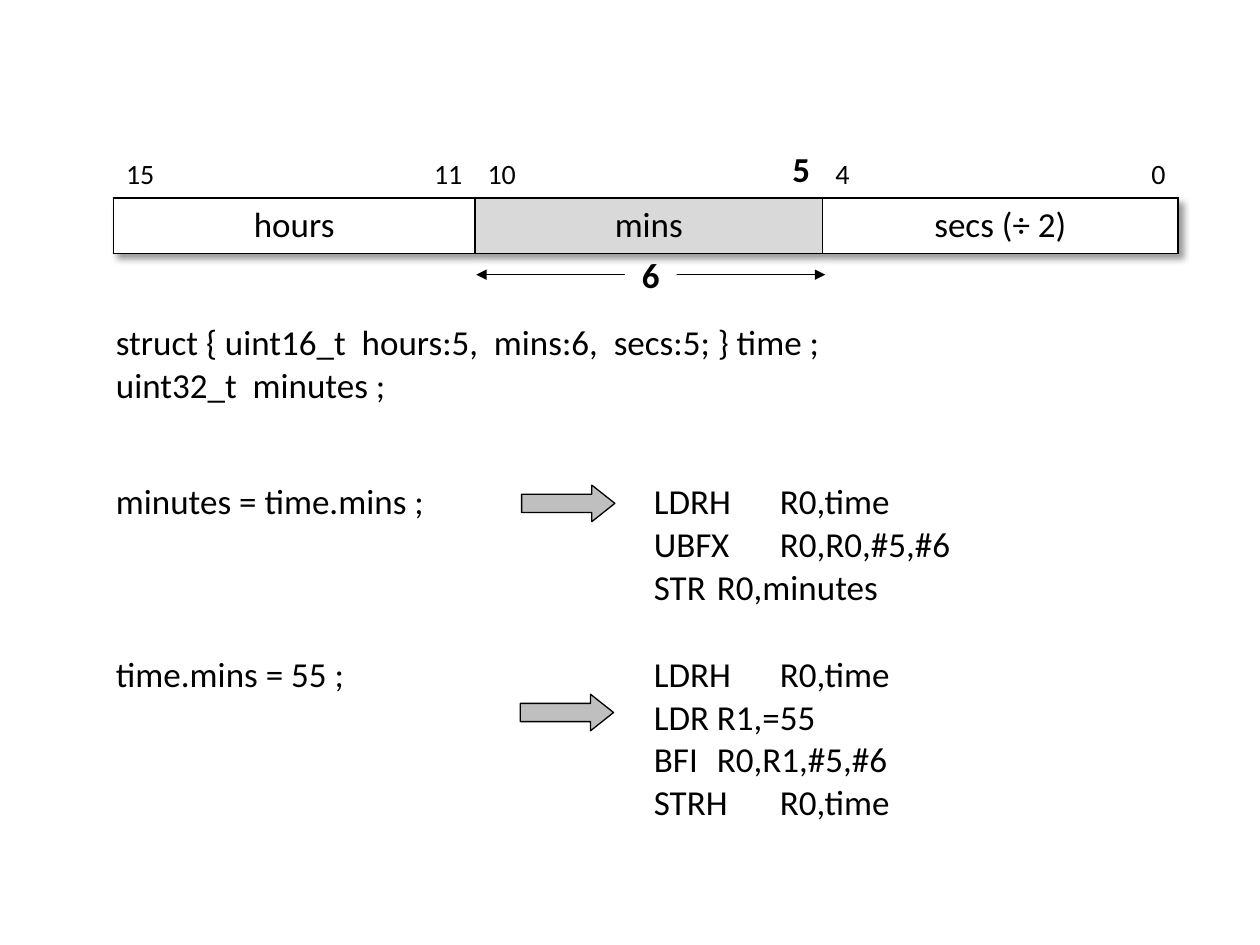
from lxml.etree import SubElement
from pptx import Presentation
from pptx.dml.color import RGBColor
from pptx.enum.shapes import MSO_CONNECTOR, MSO_SHAPE
from pptx.enum.text import MSO_ANCHOR, PP_ALIGN
from pptx.oxml import parse_xml
from pptx.oxml.ns import nsdecls, qn
from pptx.util import Inches, Pt

BLACK = RGBColor(0x00, 0x00, 0x00)
WHITE = RGBColor(0xFF, 0xFF, 0xFF)
FIELD_GRAY = RGBColor(0xD9, 0xD9, 0xD9)
ARROW_GRAY = RGBColor(0xBF, 0xBF, 0xBF)
FONT = "Calibri"
PLAIN_STYLE = "{2D5ABB26-0587-4C30-8999-92F81FD0307C}"

BIT_LABELS = [("15", "11"), ("10", "5"), ("4", "0")]
FIELDS = [("hours", WHITE), ("mins", FIELD_GRAY), ("secs (÷ 2)", WHITE)]
DECLARATION = ["struct { uint16_t  hours:5,  mins:6,  secs:5; } time ;",
               "uint32_t  minutes ;"]
EXAMPLES = [
    ("minutes = time.mins ;",
     ["LDRH\tR0,time", "UBFX\tR0,R0,#5,#6", "STR\tR0,minutes"]),
    ("time.mins = 55 ;",
     ["LDRH\tR0,time", "LDR\tR1,=55", "BFI\tR0,R1,#5,#6", "STRH\tR0,time"]),
]


def write(frame, text, size=20, bold=False, align=PP_ALIGN.LEFT):
    frame.text = text
    paragraph = frame.paragraphs[0]
    paragraph.alignment = align
    font = paragraph.font
    font.name, font.size, font.bold = FONT, Pt(size), bold
    font.color.rgb = BLACK


def add_plain_table(slide, left, top, widths, heights):
    table = slide.shapes.add_table(
        len(heights), len(widths), Inches(left), Inches(top),
        Inches(sum(widths)), Inches(sum(heights))).table
    table.first_row = table.horz_banding = False
    table._tbl.tblPr.find(qn("a:tableStyleId")).text = PLAIN_STYLE
    for column, width in zip(table.columns, widths):
        column.width = Inches(width)
    for row, height in zip(table.rows, heights):
        row.height = Inches(height)
    for cell in table.iter_cells():
        cell.fill.background()
    return table


def outline_cell(cell):
    properties = cell._tc.get_or_add_tcPr()
    for index, side in enumerate(("lnL", "lnR", "lnT", "lnB")):
        properties.insert(index, parse_xml(
            f'<a:{side} {nsdecls("a")} w="12700"><a:solidFill>'
            f'<a:srgbClr val="{BLACK}"/></a:solidFill></a:{side}>'))


def add_table_shadow(table):
    table._tbl.tblPr.insert(0, parse_xml(
        f'<a:effectLst {nsdecls("a")}><a:outerShdw blurRad="50800" dist="38100" '
        'dir="2700000" algn="tl" rotWithShape="0"><a:srgbClr val="000000">'
        '<a:alpha val="40000"/></a:srgbClr></a:outerShdw></a:effectLst>'))


def add_code_table(slide, left, top):
    table = add_plain_table(slide, left, top, [4.27, 4.27], [1.26, 1.37, 1.62])
    table.cell(0, 0).merge(table.cell(0, 1))
    write(table.cell(0, 0).text_frame, "\v".join(DECLARATION))
    for row, (statement, assembly) in enumerate(EXAMPLES, start=1):
        write(table.cell(row, 0).text_frame, statement)
        write(table.cell(row, 1).text_frame, "\v".join(assembly))


def add_width_marker(slide, left, top, width, height):
    # Double-headed line with the field width in its middle
    middle = top + height / 2
    line = slide.shapes.add_connector(
        MSO_CONNECTOR.STRAIGHT, Inches(left), Inches(middle),
        Inches(left + width), Inches(middle))
    line.line.color.rgb = BLACK
    line.line.width = Pt(0.75)
    line_properties = line.line._get_or_add_ln()
    for end in ("a:headEnd", "a:tailEnd"):
        SubElement(line_properties, qn(end), type="triangle")
    SubElement(line._element.spPr, qn("a:effectLst"))

    label_width = 0.41
    label = slide.shapes.add_shape(
        MSO_SHAPE.RECTANGLE, Inches(left + (width - label_width) / 2),
        Inches(top), Inches(label_width), Inches(height))
    label.shadow.inherit = False
    label.fill.solid()
    label.fill.fore_color.rgb = WHITE
    label.line.fill.background()
    write(label.text_frame, "6", bold=True, align=PP_ALIGN.CENTER)


def add_bit_layout(slide, left, top):
    table = add_plain_table(slide, left, top,
                            [1.41, 1.46, 1.35, 1.41, 1.41, 1.41], [0.43, 0.43])
    add_table_shadow(table)
    for index, (labels, (name, color)) in enumerate(zip(BIT_LABELS, FIELDS)):
        pair = (2 * index, 2 * index + 1)
        # Bit numbers above the field
        for column, label, align in zip(pair, labels, (PP_ALIGN.LEFT, PP_ALIGN.RIGHT)):
            cell = table.cell(0, column)
            cell.vertical_anchor = MSO_ANCHOR.BOTTOM
            key_bit = label == "5"
            write(cell.text_frame, label, 20 if key_bit else 16, key_bit, align)
        # The field itself
        field = table.cell(1, pair[0])
        field.merge(table.cell(1, pair[1]))
        for column in pair:
            outline_cell(table.cell(1, column))
        field.fill.solid()
        field.fill.fore_color.rgb = color
        field.vertical_anchor = MSO_ANCHOR.MIDDLE
        write(field.text_frame, name, align=PP_ALIGN.CENTER)


def add_block_arrow(slide, left, top, width, height):
    arrow = slide.shapes.add_shape(MSO_SHAPE.RIGHT_ARROW, Inches(left), Inches(top),
                                   Inches(width), Inches(height))
    arrow.adjustments[0], arrow.adjustments[1] = 0.5, 0.63
    arrow.shadow.inherit = False
    arrow.fill.solid()
    arrow.fill.fore_color.rgb = ARROW_GRAY
    arrow.line.color.rgb = BLACK
    arrow.line.width = Pt(0.75)


def main():
    presentation = Presentation()
    presentation.slide_width, presentation.slide_height = Inches(10), Inches(7.5)
    slide = presentation.slides.add_slide(presentation.slide_layouts[6])
    add_code_table(slide, 0.82, 2.51)
    add_width_marker(slide, 3.78, 1.96, 2.77, 0.44)
    add_bit_layout(slide, 0.9, 1.13)
    for left, top in ((4.14, 3.85), (4.13, 5.51)):
        add_block_arrow(slide, left, top, 0.74, 0.29)
    presentation.save("out.pptx")


if __name__ == "__main__":
    main()
